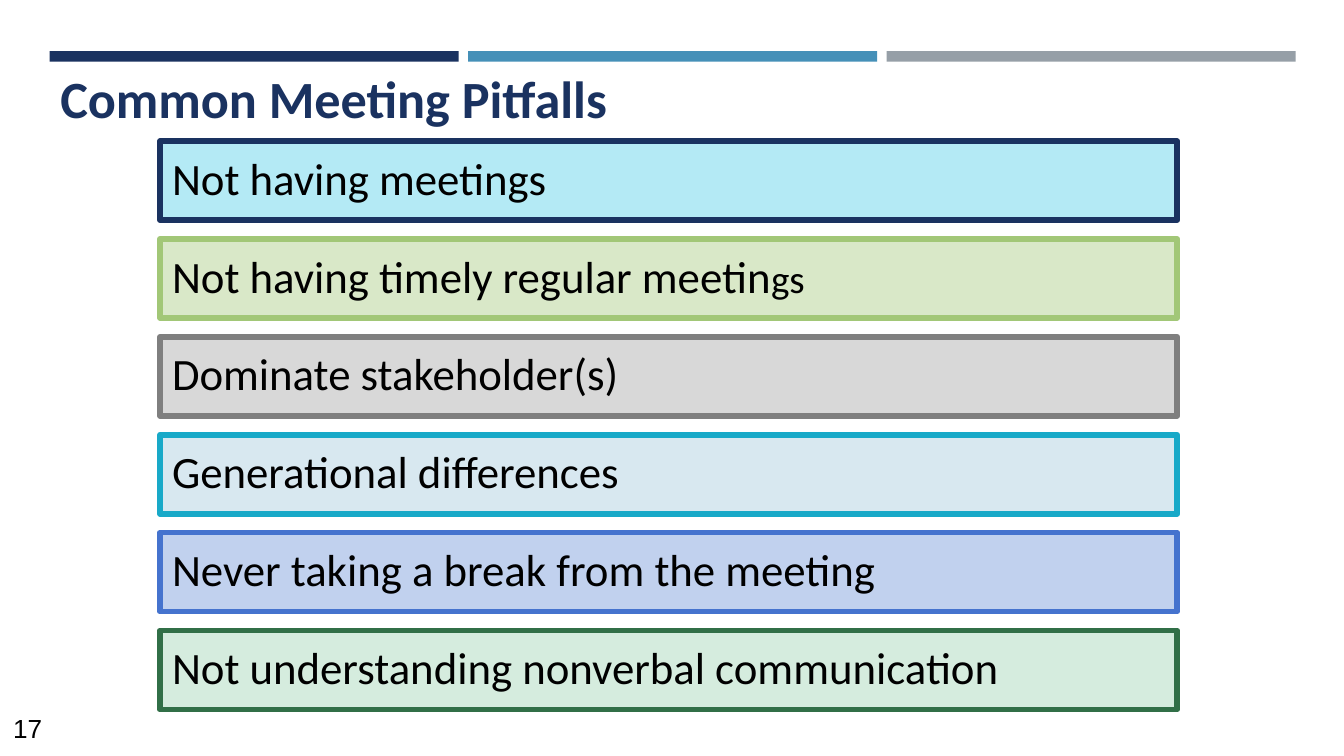
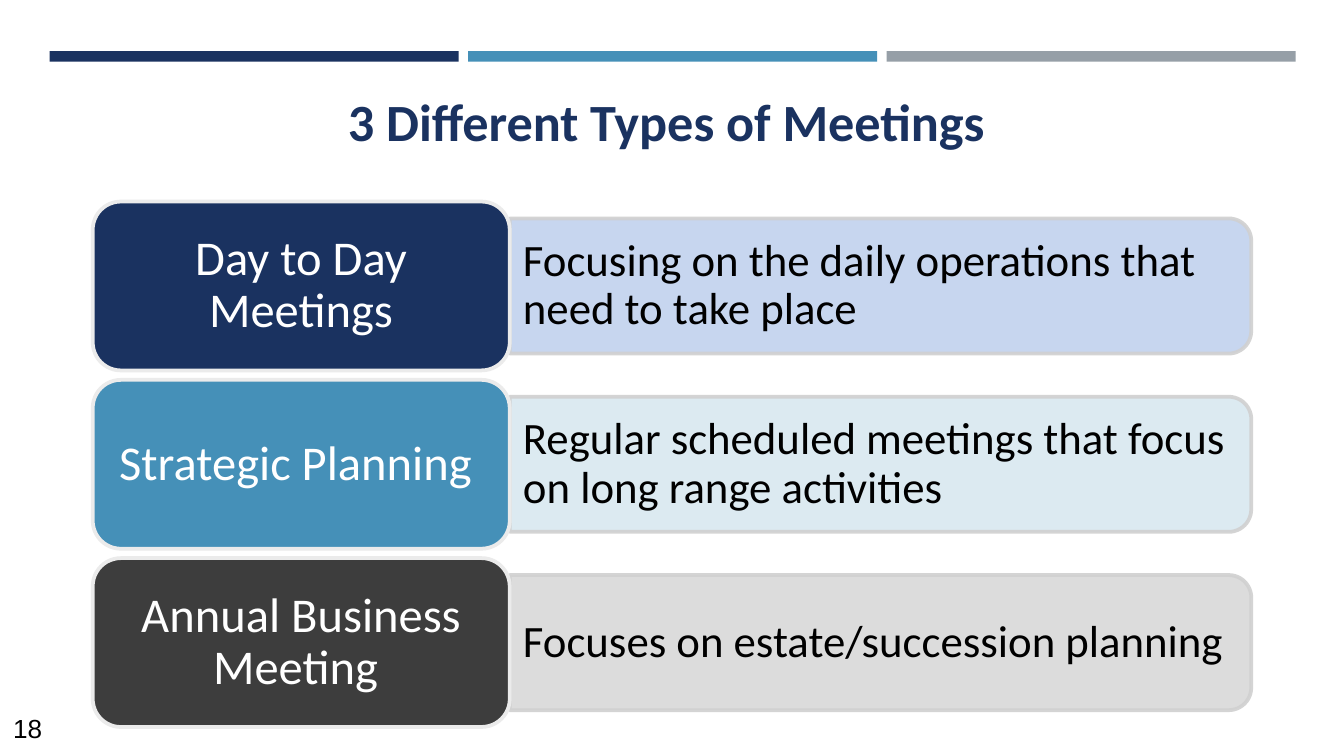
from pptx import Presentation
from pptx.dml.color import RGBColor
from pptx.enum.shapes import MSO_SHAPE
from pptx.enum.text import MSO_ANCHOR, PP_ALIGN
from pptx.oxml.ns import qn
from pptx.util import Inches, Pt
from lxml import etree

RECT = MSO_SHAPE.RECTANGLE
ROUND = MSO_SHAPE.ROUNDED_RECTANGLE
TAB = MSO_SHAPE.ROUND_2_SAME_RECTANGLE
TOP, MID, LOW = MSO_ANCHOR.TOP, MSO_ANCHOR.MIDDLE, MSO_ANCHOR.BOTTOM
LEFT, CENTER = PP_ALIGN.LEFT, PP_ALIGN.CENTER

WIDE = 10
HIGH = WIDE * 9 / 16
HEX = {
    "navy": "1A3260", "blue": "4590B8", "slate": "969FA7",
    "black": "000000", "white": "FFFFFF", "coal": "3D3D3D",
    "aqua": "B4EAF5", "lime": "D9E8C8", "gray": "D8D8D8",
    "ice": "D8E8F0", "sky": "C1D1EE", "mint": "D5ECDE",
    "leaf": "A2C777", "stone": "7F7F7F", "teal": "18A9C8",
    "royal": "4573CE", "pine": "316F47",
    "edge": "D0D0D0", "rim": "EBEBEB",
}
FADE = 89
PITS = [
    ([("Not having meetings", 24)], "aqua", "navy"),
    ([("Not having timely regular meetin", 24), ("gs", 21)], "lime", "leaf"),
    ([("Dominate stakeholder(s)", 24)], "gray", "stone"),
    ([("Generational differences", 24)], "ice", "teal"),
    ([("Never taking a break from the meeting", 24)], "sky", "royal"),
    ([("Not understanding nonverbal communication", 24)], "mint", "pine"),
]
TYPES = [
    ("Day to Day Meetings", "navy", "sky",
     "Focusing on the daily operations that need to take place"),
    ("Strategic Planning ", "blue", "ice",
     "Regular scheduled meetings that focus on long range activities"),
    ("Annual Business Meeting ", "coal", "gray",
     "Focuses on estate/succession planning"),
]


def rgb(name):
    """Return the named colour."""
    return RGBColor.from_string(HEX[name])


def fade(fill):
    """Make a solid fill partly see-through."""
    tone = fill.fore_color._xFill.find(qn("a:srgbClr"))
    etree.SubElement(tone, qn("a:alpha")).set("val", str(FADE * 1000))


def write(shape, runs, size=24, color="black", font="Calibri", bold=False,
          align=LEFT, anchor=MID, space=0.9, pad=(0.1, 0.05)):
    """Put a string, or a list of (string, size) runs, into a shape."""
    frame = shape.text_frame
    frame.word_wrap = True
    frame.vertical_anchor = anchor
    frame.margin_left = frame.margin_right = Inches(pad[0])
    frame.margin_top = frame.margin_bottom = Inches(pad[1])
    para = frame.paragraphs[0]
    para.alignment, para.line_spacing = align, space
    for words, points in [(runs, size)] if isinstance(runs, str) else runs:
        run = para.add_run()
        run.text = words
        run.font.size, run.font.bold = Pt(points), bold
        run.font.name, run.font.color.rgb = font, rgb(color)


def label(slide, box, runs, **style):
    """Add a text box."""
    write(slide.shapes.add_textbox(*map(Inches, box)), runs, **style)


def block(slide, kind, box, fill, line=None, width=2, clear=False):
    """Add a filled shape with an optional outline."""
    shape = slide.shapes.add_shape(kind, *map(Inches, box))
    shape.shadow.inherit = False
    shape.fill.solid()
    shape.fill.fore_color.rgb = rgb(fill)
    if line:
        shape.line.color.rgb = rgb(line)
        shape.line.width = Pt(width)
    else:
        shape.line.fill.background()
    if clear:
        fade(shape.fill)
        fade(shape.line.fill)
    return shape


def split(start, size, count, gap):
    """Return the starts and the shared size of equal parts."""
    part = (size - gap * (count - 1)) / count
    return [start + i * (part + gap) for i in range(count)], part


def bands(slide, box):
    """Draw the three bands along the top."""
    left, top, wide, high = box
    spots, part = split(left, wide, 3, 0.07)
    for spot, tone in zip(spots, ("navy", "blue", "slate")):
        block(slide, RECT, (spot, top, part, high), tone)


def start(deck, number):
    """Add a blank slide with its bands and number."""
    slide = deck.slides.add_slide(deck.slide_layouts[6])
    bands(slide, (0.37, 0.38, 9.27, 0.08))
    label(slide, (0, HIGH - 0.37, 0.53, 0.37), str(number), size=14,
          font="Arial", anchor=TOP, space=1)
    return slide


def title(slide, box, words, **style):
    """Add the slide title."""
    label(slide, box, words, size=28, color="navy", bold=True, **style)


def bars(slide, box):
    """Stack the pitfalls as outlined bars."""
    left, top, wide, high = box
    spots, part = split(top, high, len(PITS), 0.14)
    for spot, (runs, fill, line) in zip(spots, PITS):
        bar = block(slide, RECT, (left, spot, wide, part), fill, line, 3)
        write(bar, runs, pad=(0.09, 0.09))


def rows(slide, box):
    """Stack the meeting types, each a name and a detail tab."""
    left, top, wide, high = box
    spots, part = split(top, high, len(TYPES), 0.07)
    name = wide * 0.36
    long, thin = wide - name, part * 0.8
    edge = left + name
    for spot, (words, dark, pale, note) in zip(spots, TYPES):
        mid = spot + part / 2
        tab = block(slide, TAB, (edge + (long - thin) / 2, mid - long / 2,
                                 thin, long), pale, "edge", clear=True)
        tab.rotation = 90
        label(slide, (edge, mid - thin * 0.45, long - 0.05, thin * 0.9), note)
        card = block(slide, ROUND, (left, spot, name, part), dark, "rim")
        write(card, words, size=26, color="white", align=CENTER,
              pad=(0.11, 0.05))


def pitfalls(deck):
    """Build the slide of pitfalls."""
    slide = start(deck, 17)
    bars(slide, (1.19, 1.05, 7.57, 4.23))
    title(slide, (0.35, 0.42, 9.05, 0.59), "Common Meeting Pitfalls",
          anchor=LOW, space=1)


def kinds(deck):
    """Build the slide of meeting types."""
    slide = start(deck, 18)
    title(slide, (0.69, 0.46, 8.62, 0.93), "3 Different Types of Meetings ",
          align=CENTER, pad=(0.07, 0.04))
    rows(slide, (0.69, 1.5, 8.62, 3.91))


def main():
    """Build and save the deck."""
    deck = Presentation()
    deck.slide_width, deck.slide_height = Inches(WIDE), Inches(HIGH)
    pitfalls(deck)
    kinds(deck)
    deck.save("out.pptx")


if __name__ == "__main__":
    main()
